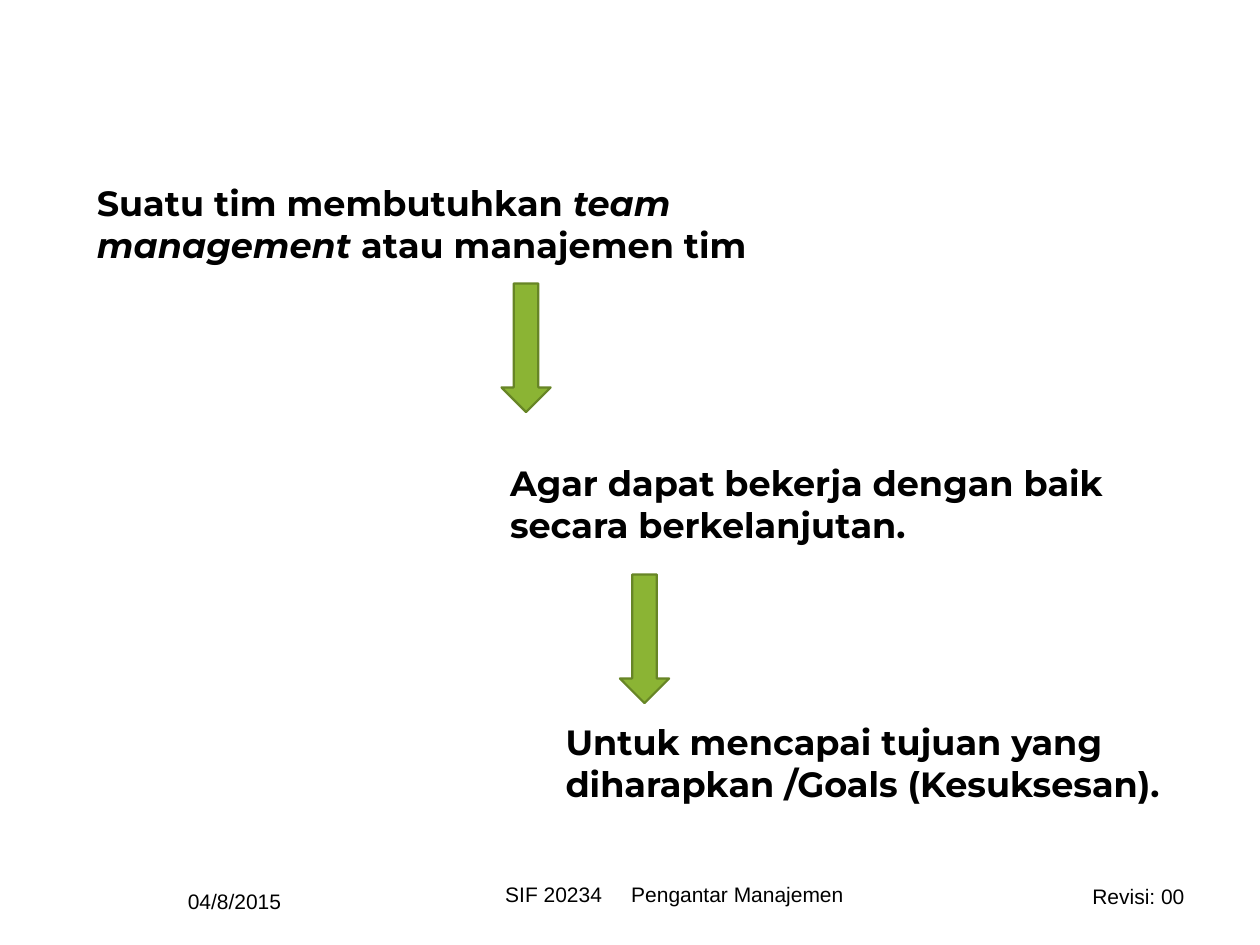
from dataclasses import dataclass

from lxml import etree
from pptx import Presentation
from pptx.dml.color import RGBColor
from pptx.enum import shapes, text
from pptx.oxml.ns import qn
from pptx.util import Inches, Length, Pt

COLUMNS, ROWS = 100, 75
WIDTH, HEIGHT = Inches(10), Inches(7.5)
BLACK, GREEN, DARK_GREEN = "000000", "8BB434", "678526"


@dataclass(frozen=True)
class Area:
    column: float
    row: float
    columns: float
    rows: float

    def lengths(self) -> tuple[int, int, int, int]:
        return (
            across(self.column),
            down(self.row),
            across(self.columns),
            down(self.rows),
        )


@dataclass(frozen=True)
class Run:
    words: str
    italic: bool = False


@dataclass(frozen=True)
class Label:
    area: Area
    runs: tuple[Run, ...]
    size: int = 20
    font: str = "Montserrat"
    bold: bool = True
    align: text.PP_ALIGN = text.PP_ALIGN.LEFT
    anchor: text.MSO_ANCHOR = text.MSO_ANCHOR.TOP
    grow: bool = True
    inset: float = 1
    tab: float = 0


def across(columns: float) -> Length:
    return Length(round(WIDTH * columns / COLUMNS))


def down(rows: float) -> Length:
    return Length(round(HEIGHT * rows / ROWS))


def colour(value: str) -> RGBColor:
    return RGBColor.from_string(value)


def statement(column: float, row: float, columns: float, *runs: Run) -> Label:
    return Label(Area(column, row, columns, 7.7), runs)


def footer(area: Area, words: str, **options) -> Label:
    return Label(area, (Run(words),), size=12, font="Arial", bold=False, **options)


def draw_label(slide, label: Label) -> None:
    frame = slide.shapes.add_textbox(*label.area.lengths()).text_frame
    frame.word_wrap = True
    frame.margin_left = across(label.inset)
    frame.vertical_anchor = label.anchor
    if label.grow:
        frame.auto_size = text.MSO_AUTO_SIZE.SHAPE_TO_FIT_TEXT
    line = frame.paragraphs[0]
    line.alignment = label.align
    if label.tab:
        stops = etree.SubElement(line._p.get_or_add_pPr(), qn("a:tabLst"))
        etree.SubElement(stops, qn("a:tab"), pos=str(across(label.tab)), algn="l")
    line.font.name = label.font
    line.font.size = Pt(label.size)
    line.font.bold = label.bold
    line.font.color.rgb = colour(BLACK)
    for part in label.runs:
        run = line.add_run()
        run.text = part.words
        if part.italic:
            run.font.italic = True


def draw_arrow(slide, area: Area) -> None:
    arrow = slide.shapes.add_shape(shapes.MSO_SHAPE.DOWN_ARROW, *area.lengths())
    arrow.shadow.inherit = False
    arrow.fill.solid()
    arrow.fill.fore_color.rgb = colour(GREEN)
    arrow.line.color.rgb = colour(DARK_GREEN)
    arrow.line.width = Pt(1.25)


STATEMENTS = (
    statement(
        6.7, 13.9, 56.7,
        Run("Suatu tim membutuhkan "),
        Run("team management ", italic=True),
        Run("atau manajemen tim"),
    ),
    statement(39.5, 36.1, 50, Run("Agar dapat bekerja dengan baik secara berkelanjutan.")),
    statement(
        43.9, 56.7, 50,
        Run("Untuk mencapai tujuan yang diharapkan /Goals (Kesuksesan)."),
    ),
)
ARROWS = (Area(39.8, 22.5, 3.9, 10.2), Area(49.2, 45.6, 3.9, 10.2))
FOOTERS = (
    footer(
        Area(0, 69.5, 23.3, 4), "04/8/2015",
        align=text.PP_ALIGN.RIGHT, anchor=text.MSO_ANCHOR.MIDDLE, grow=False,
    ),
    footer(
        Area(26.4, 69.5, 54.4, 4.2), "SIF 20234\tPengantar Manajemen",
        grow=False, inset=13.7, tab=10,
    ),
    footer(Area(71.7, 69.6, 23.3, 3), "Revisi: 00", align=text.PP_ALIGN.RIGHT),
)


def main() -> None:
    deck = Presentation()
    deck.slide_width, deck.slide_height = WIDTH, HEIGHT
    slide = deck.slides.add_slide(deck.slide_layouts[6])
    for label in STATEMENTS + FOOTERS:
        draw_label(slide, label)
    for area in ARROWS:
        draw_arrow(slide, area)
    deck.save("out.pptx")


if __name__ == "__main__":
    main()
